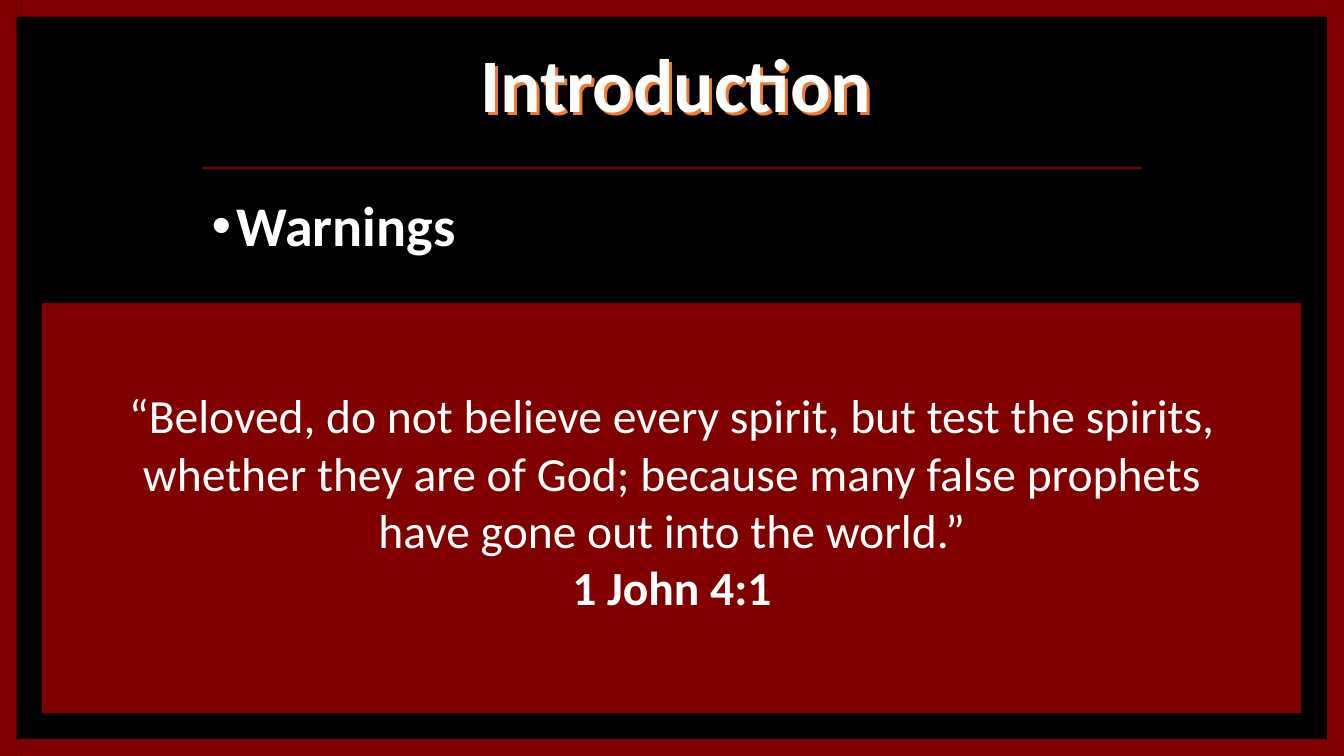
from lxml import etree
from pptx import Presentation
from pptx.dml.color import RGBColor
from pptx.enum.shapes import MSO_CONNECTOR, MSO_SHAPE
from pptx.enum.text import MSO_ANCHOR, PP_ALIGN
from pptx.oxml import parse_xml
from pptx.oxml.ns import nsdecls, qn
from pptx.util import Inches, Pt

BLACK = RGBColor(0x00, 0x00, 0x00)
WHITE = RGBColor(0xFF, 0xFF, 0xFF)
MAROON = RGBColor(0x80, 0x00, 0x00)
ORANGE = RGBColor(0xED, 0x7D, 0x31)

RECTANGLE = MSO_SHAPE.RECTANGLE
STRAIGHT = MSO_CONNECTOR.STRAIGHT
TOP, MIDDLE = MSO_ANCHOR.TOP, MSO_ANCHOR.MIDDLE
LEFT, CENTER = PP_ALIGN.LEFT, PP_ALIGN.CENTER

# The slide is a grid of square cells, twelve to the inch.
CELL = Inches(1) / 12
COLUMNS, ROWS = 160, 90
BORDER = 2
RULE_LEFT, RULE_RIGHT, RULE_ROW = 24, 136, 20

QUOTE = ("“Beloved, do not believe every spirit, but test the spirits, "
         "whether they are of God; because many false prophets\n"
         "have gone out into the world.”")


def cells(*counts):
    return [round(count * CELL) for count in counts]


def add_block(page, area, outline=None):
    block = page.shapes.add_shape(RECTANGLE, *cells(*area))
    block.shadow.inherit = False
    block.fill.solid()
    block.fill.fore_color.rgb = MAROON
    if outline is None:
        block.line.fill.background()
    else:
        block.line.color.rgb = outline
        block.line.width = Pt(0.75)


def add_rule(page):
    rule = page.shapes.add_connector(
        STRAIGHT, *cells(RULE_LEFT, RULE_ROW, RULE_RIGHT, RULE_ROW))
    rule.line.color.rgb = MAROON
    rule.line.width = Pt(2)
    etree.SubElement(rule._element.spPr, qn("a:effectLst"))


def add_text(page, area, paragraphs, size, align=CENTER, anchor=TOP, spacing=1.0):
    """Add a text box; paragraphs is a list of (text, bold) pairs."""
    box = page.shapes.add_textbox(*cells(*area))
    frame = box.text_frame
    frame.word_wrap = True
    frame.vertical_anchor = anchor
    for index, (text, bold) in enumerate(paragraphs):
        para = frame.add_paragraph() if index else frame.paragraphs[0]
        para.text = text
        para.alignment = align
        para.line_spacing = spacing
        font_format = {"name": "Calibri", "size": Pt(size), "bold": bold}
        for span in para.runs:
            for name, value in font_format.items():
                setattr(span.font, name, value)
            span.font.color.rgb = WHITE
    return box


def add_bullet(para):
    properties = para._p.get_or_add_pPr()
    properties.set("marL", str(Inches(0.25)))
    properties.set("indent", str(-Inches(0.25)))
    for tag, name, value in (("a:buFont", "typeface", "Arial"),
                             ("a:buChar", "char", "•")):
        etree.SubElement(properties, qn(tag)).set(name, value)


def add_hard_shadow(box):
    """Cast a sharp orange shadow down and to the right of the letters."""
    box._element.spPr.append(parse_xml(
        f'<a:effectLst {nsdecls("a")}>'
        f'<a:outerShdw dist="{Pt(3)}" dir="2700000" algn="tl" rotWithShape="0">'
        f'<a:srgbClr val="{ORANGE}"/></a:outerShdw></a:effectLst>'))


def add_border(page):
    for column in (0, COLUMNS - BORDER):
        add_block(page, (column, 0, BORDER, ROWS))
    for row in (0, ROWS - BORDER):
        add_block(page, (BORDER, row, COLUMNS - BORDER - 1, BORDER))


def main():
    deck = Presentation()
    deck.slide_width, deck.slide_height = cells(COLUMNS, ROWS)
    page = deck.slides.add_slide(deck.slide_layouts[6])
    page.background.fill.solid()
    page.background.fill.fore_color.rgb = BLACK

    title = add_text(page, (27, 3, 107, 15), [("Introduction", True)], 54,
                     anchor=MIDDLE, spacing=0.9)
    add_hard_shadow(title)
    topic = add_text(page, (24, 23, 112, 10), [("Warnings", True)], 40,
                     align=LEFT, spacing=0.9)
    add_bullet(topic.text_frame.paragraphs[0])

    add_block(page, (5, 36, 150, 49), outline=BLACK)
    add_text(page, (8, 45.4, 144, 28.7),
             [(QUOTE, False), ("1 John 4:1", True)], 34)
    add_rule(page)
    add_border(page)
    deck.save("out.pptx")


if __name__ == "__main__":
    main()
